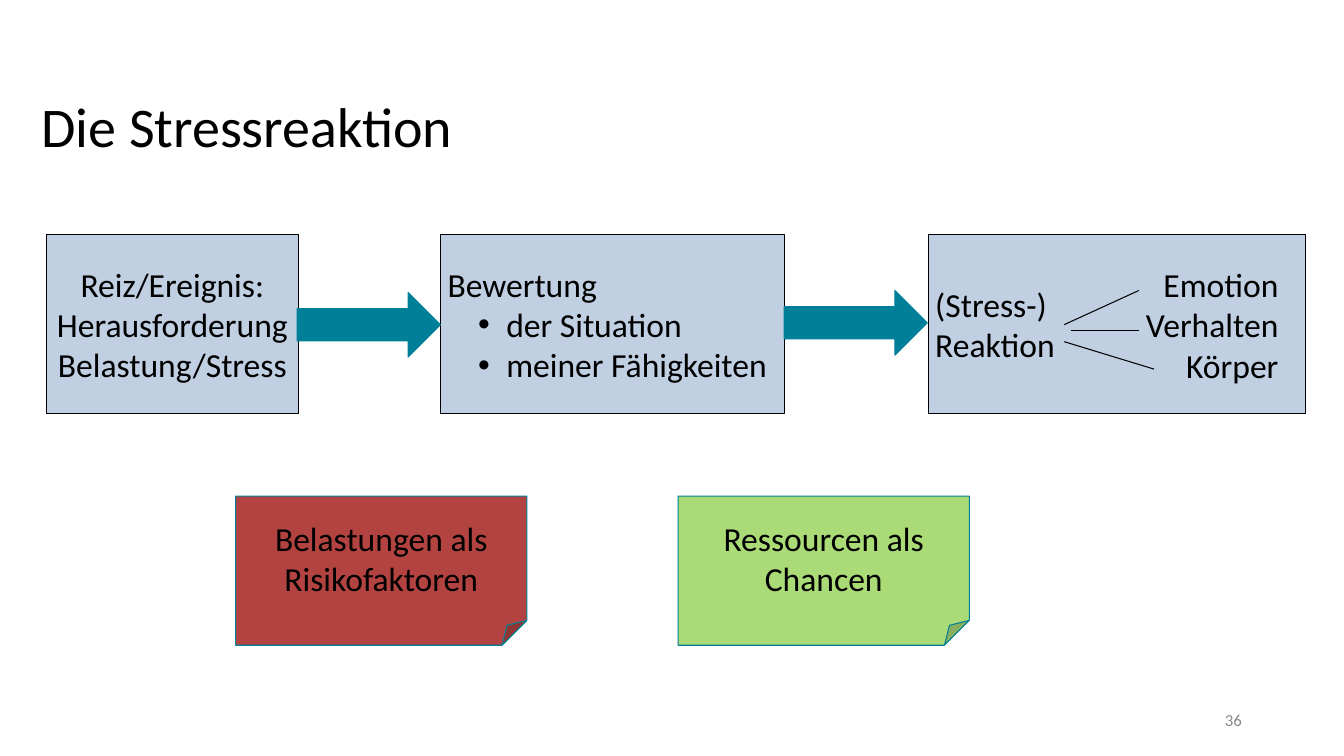
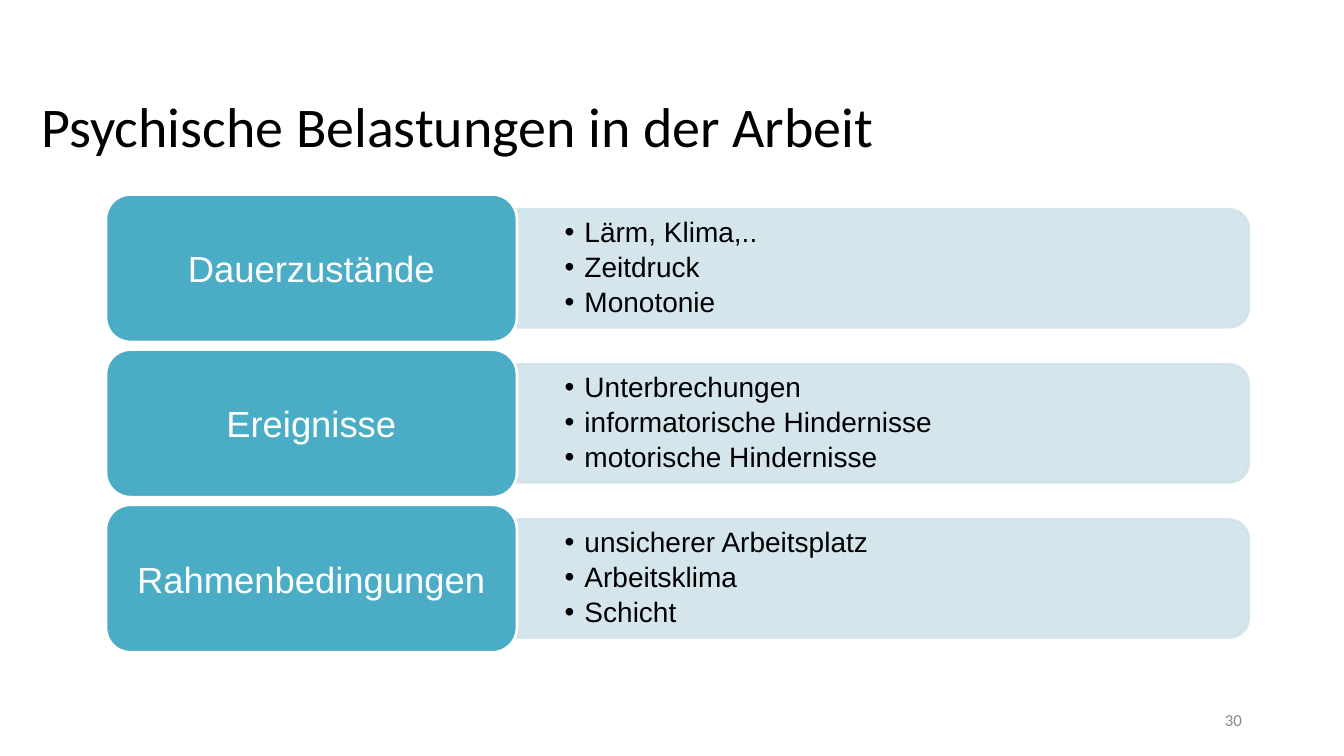
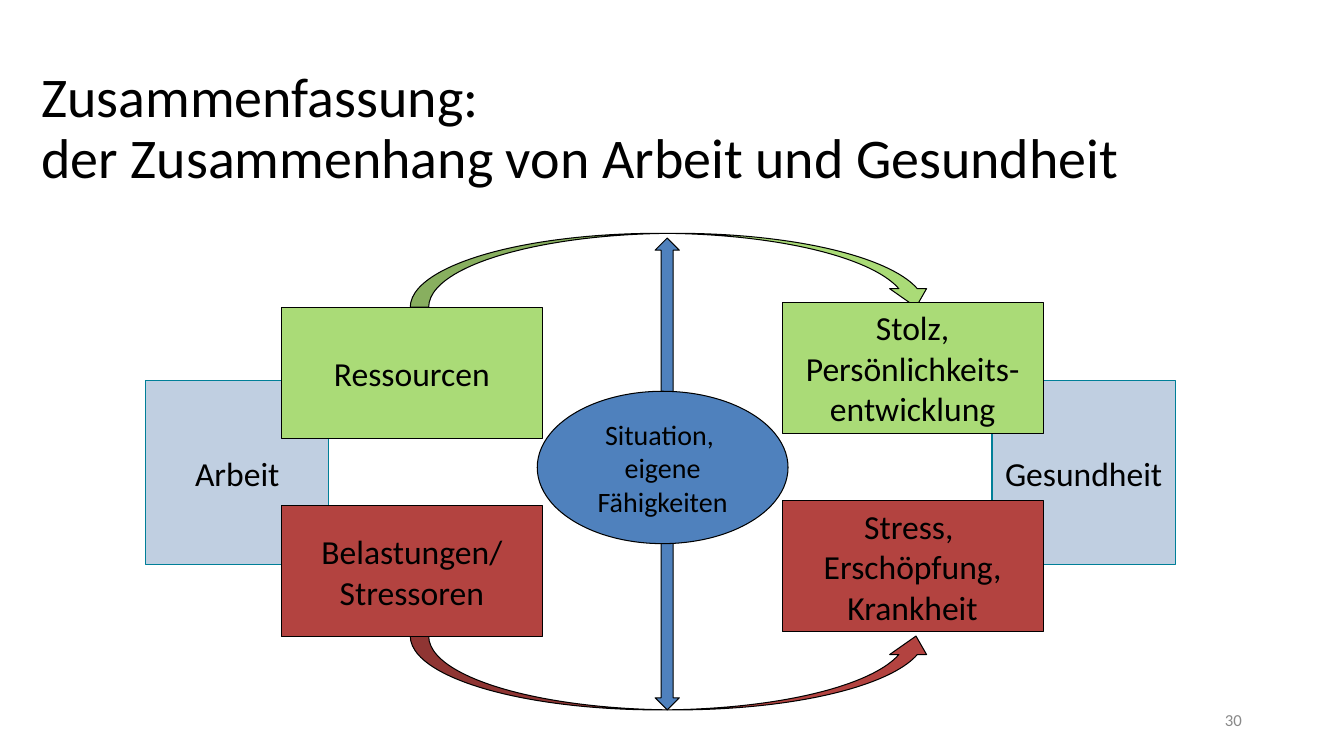
"""Build three slides on stress reactions, mental strain, and work and health."""
from lxml import etree
from pptx import Presentation
from pptx.dml.color import RGBColor
from pptx.enum.shapes import MSO_CONNECTOR, MSO_SHAPE
from pptx.enum.text import MSO_ANCHOR, MSO_AUTO_SIZE, PP_ALIGN
from pptx.oxml.ns import qn
from pptx.util import Cm, Pt

BLACK = RGBColor(0x00, 0x00, 0x00)
WHITE = RGBColor(0xFF, 0xFF, 0xFF)
GRAY = RGBColor(0x89, 0x89, 0x89)
PALE_BLUE = RGBColor(0xC0, 0xCF, 0xE1)
BLUE = RGBColor(0x4F, 0x81, 0xBD)
PETROL = RGBColor(0x00, 0x7F, 0x98)
AQUA = RGBColor(0x4B, 0xAC, 0xC6)
PALE_AQUA = RGBColor(0xD0, 0xE3, 0xEA)
RED = RGBColor(0xB3, 0x43, 0x40)
GREEN = RGBColor(0xAA, 0xDB, 0x77)

RECTANGLE = MSO_SHAPE.RECTANGLE
ROUNDED = MSO_SHAPE.ROUNDED_RECTANGLE
ROUNDED_TOP = MSO_SHAPE.ROUND_2_SAME_RECTANGLE
FOLDED = MSO_SHAPE.FOLDED_CORNER
CIRCLE = MSO_SHAPE.FLOWCHART_CONNECTOR
RIGHT_ARROW = MSO_SHAPE.RIGHT_ARROW
UP_ARROW = MSO_SHAPE.UP_ARROW
DOWN_ARROW = MSO_SHAPE.DOWN_ARROW
CURVED_ARROW = MSO_SHAPE.CURVED_DOWN_ARROW
STRAIGHT = MSO_CONNECTOR.STRAIGHT
LEFT, CENTER, RIGHT = PP_ALIGN.LEFT, PP_ALIGN.CENTER, PP_ALIGN.RIGHT
MIDDLE = MSO_ANCHOR.MIDDLE
FIT_SHAPE, NO_FIT = MSO_AUTO_SIZE.SHAPE_TO_FIT_TEXT, MSO_AUTO_SIZE.NONE


def add_box(slide, kind, left, top, width, height, fill, line=BLACK, text="",
            size=24, color=BLACK, font="Calibri", align=CENTER, weight=0.75):
    box = slide.shapes.add_shape(kind, Cm(left), Cm(top), Cm(width), Cm(height))
    box.shadow.inherit = False
    box.fill.solid()
    box.fill.fore_color.rgb = fill
    box.line.color.rgb = line
    box.line.width = Pt(weight)
    frame = box.text_frame
    frame.word_wrap = True
    frame.vertical_anchor = MIDDLE
    frame.margin_left = frame.margin_right = Cm(0.18)
    frame.margin_top = frame.margin_bottom = Cm(0.1)
    if text:
        frame.text = text
        for paragraph in frame.paragraphs:
            paragraph.alignment = align
            paragraph.font.size = Pt(size)
            paragraph.font.name = font
            paragraph.font.color.rgb = color
    return box


def add_bullet(paragraph, indent, hanging):
    properties = paragraph._p.get_or_add_pPr()
    properties.set("marL", str(Cm(indent)))
    properties.set("indent", str(-Cm(hanging)))
    etree.SubElement(properties, qn("a:buFont")).set("typeface", "Arial")
    etree.SubElement(properties, qn("a:buChar")).set("char", "•")


prs = Presentation()
prs.slide_width, prs.slide_height = Cm(33.87), Cm(19.05)

slides = []
for heading, number in [
    ("Die Stressreaktion", "36"),
    ("Psychische Belastungen in der Arbeit", "30"),
    ("Zusammenfassung: \vder Zusammenhang von Arbeit und Gesundheit", "30"),
]:
    slide = prs.slides.add_slide(prs.slide_layouts[5])
    title = slide.shapes.title
    title.left, title.top, title.width, title.height = Cm(0.79), Cm(2.18), Cm(28.78), Cm(2.18)
    page = slide.shapes.add_textbox(Cm(23.93), Cm(17.65), Cm(7.62), Cm(1.02))
    for holder, text, size, color, align in [
        (title, heading, 40, BLACK, LEFT),
        (page, number, 12, GRAY, RIGHT),
    ]:
        frame = holder.text_frame
        frame.text = text
        frame.word_wrap = True
        frame.auto_size = NO_FIT
        frame.vertical_anchor = MIDDLE
        paragraph = frame.paragraphs[0]
        paragraph.alignment = align
        paragraph.line_spacing = 0.9
        paragraph.font.name = "Calibri"
        paragraph.font.size = Pt(size)
        paragraph.font.color.rgb = color
    slides.append(slide)
reaction_slide, strain_slide, summary_slide = slides

steps = []
for left, width, text, align in [
    (1.17, 6.35, "Reiz/Ereignis:\vHerausforderung\nBelastung/Stress", CENTER),
    (11.1, 8.66, "Bewertung\nder Situation\nmeiner Fähigkeiten", LEFT),
    (23.39, 9.52, "(Stress-)\vReaktion", LEFT),
]:
    steps.append(add_box(reaction_slide, RECTANGLE, left, 5.92, width, 4.5,
                         PALE_BLUE, text=text, align=align))
for paragraph in steps[1].text_frame.paragraphs[1:]:
    add_bullet(paragraph, 1.48, 0.71)

for left, top in [(7.49, 7.37), (19.76, 7.32)]:
    add_box(reaction_slide, RIGHT_ARROW, left, top, 3.61, 1.63, PETROL, PETROL)

levels = reaction_slide.shapes.add_textbox(Cm(28.58), Cm(6.53), Cm(3.89), Cm(3.33)).text_frame
levels.word_wrap = False
levels.auto_size = FIT_SHAPE
levels.text = "Emotion\vVerhalten\vKörper"
levels.paragraphs[0].alignment = RIGHT
levels.paragraphs[0].font.name = "Calibri"
levels.paragraphs[0].font.size = Pt(24)
levels.paragraphs[0].font.color.rgb = BLACK

for x1, y1, x2, y2 in [
    (26.82, 8.18, 28.7, 7.32),
    (27, 8.33, 28.7, 8.33),
    (26.82, 8.61, 29.08, 9.3),
]:
    branch = reaction_slide.shapes.add_connector(STRAIGHT, Cm(x1), Cm(y1), Cm(x2), Cm(y2))
    branch.line.color.rgb = BLACK
    branch.line.width = Pt(0.75)
    etree.SubElement(branch._element.spPr, qn("a:effectLst"))

for left, fill, text in [
    (5.94, RED, "Belastungen als Risikofaktoren"),
    (17.09, GREEN, "Ressourcen als Chancen"),
]:
    add_box(reaction_slide, FOLDED, left, 12.5, 7.34, 3.76, fill, PETROL, text)

BAND_LENGTH, BAND_HEIGHT, BAND_LEFT = 18.44, 2.97, 13.03
for row, (category, examples) in enumerate([
    ("Dauerzustände", "Lärm, Klima,..\nZeitdruck\nMonotonie"),
    ("Ereignisse", "Unterbrechungen\ninformatorische Hindernisse\nmotorische Hindernisse"),
    ("Rahmenbedingungen", "unsicherer Arbeitsplatz\nArbeitsklima\nSchicht"),
]):
    middle = 6.76 + row * 3.91
    band = add_box(strain_slide, ROUNDED_TOP, BAND_LEFT + (BAND_LENGTH - BAND_HEIGHT) / 2,
                   middle - BAND_LENGTH / 2, BAND_HEIGHT, BAND_LENGTH,
                   PALE_AQUA, PALE_AQUA, weight=2)
    band.rotation = 90
    for tint in band._element.spPr.iter(qn("a:srgbClr")):
        etree.SubElement(tint, qn("a:alpha")).set("val", "90000")

    details = strain_slide.shapes.add_textbox(
        Cm(BAND_LEFT), Cm(middle - 1.35), Cm(18.29), Cm(2.7)).text_frame
    details.word_wrap = True
    details.vertical_anchor = MIDDLE
    details.margin_left = details.margin_right = Cm(0.2)
    details.margin_top = details.margin_bottom = Cm(0.1)
    details.text = examples
    for paragraph in details.paragraphs:
        paragraph.line_spacing = 0.9
        paragraph.space_after = Pt(3.5)
        paragraph.font.name = "Arial"
        paragraph.font.size = Pt(20)
        paragraph.font.color.rgb = BLACK
        add_bullet(paragraph, 1.5, 0.5)

    add_box(strain_slide, ROUNDED, 2.67, middle - 1.86, 10.36, 3.72, AQUA, WHITE,
            category, 26, WHITE, "Arial", weight=2)

add_box(summary_slide, UP_ARROW, 16.51, 6, 0.61, 4.22, BLUE)
for left, text in [(3.67, "Arbeit"), (25, "Gesundheit")]:
    add_box(summary_slide, RECTANGLE, left, 9.6, 4.62, 4.62, PALE_BLUE, PETROL, text)

add_box(summary_slide, CURVED_ARROW, 10.34, 5.88, 13.21, 1.86, GREEN)
lower_arc = add_box(summary_slide, CURVED_ARROW, 10.34, 16.03, 13.21, 1.86, RED)
lower_arc._element.spPr.find(qn("a:xfrm")).set("flipV", "1")

for left, top, fill, text in [
    (7.09, 7.75, GREEN, "Ressourcen"),
    (7.09, 12.75, RED, "Belastungen/\vStressoren"),
    (19.71, 7.62, GREEN, "Stolz, Persönlichkeits-entwicklung"),
    (19.71, 12.62, RED, "Stress, \vErschöpfung,\vKrankheit"),
]:
    add_box(summary_slide, RECTANGLE, left, top, 6.58, 3.3, fill, text=text)

add_box(summary_slide, DOWN_ARROW, 16.51, 13.67, 0.61, 4.22, BLUE)
add_box(summary_slide, CIRCLE, 13.54, 9.86, 6.32, 3.84, BLUE,
        text="Situation, \veigene Fähigkeiten", size=20)

prs.save("out.pptx")
